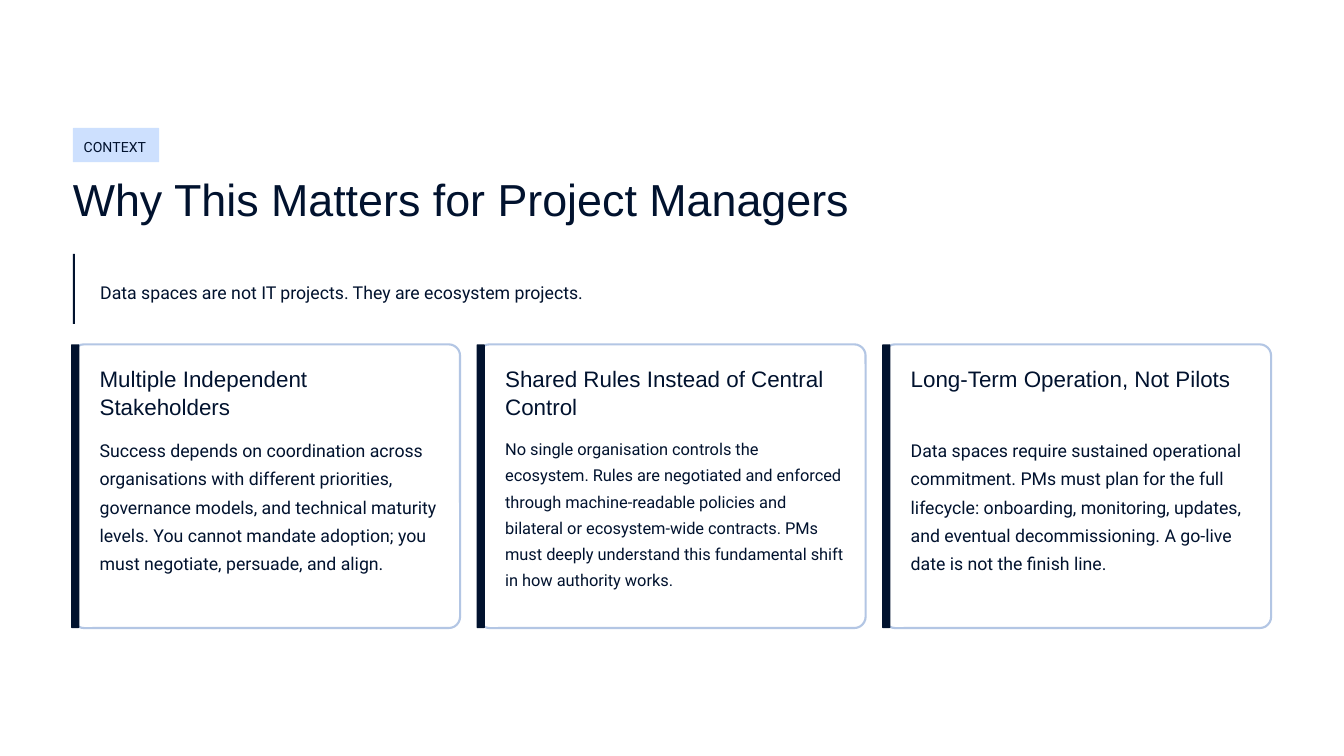
"""Build the context slide on why data spaces matter for project managers."""
from pptx import Presentation
from pptx.dml.color import RGBColor
from pptx.enum.shapes import MSO_SHAPE
from pptx.enum.text import MSO_ANCHOR, MSO_AUTO_SIZE, PP_ALIGN
from pptx.util import Pt

COLORS = {"ink": "01122E", "tag": "CDE0FE", "border": "B3C6E4", "paper": "FFFFFF"}
FRAME = {
    "margin_left": 0, "margin_top": 0, "margin_right": 0, "margin_bottom": 0,
    "word_wrap": True, "auto_size": MSO_AUTO_SIZE.NONE, "vertical_anchor": MSO_ANCHOR.TOP,
}
HEADING = {"name": "Arial", "spacing": 1.04}
BODY = {"name": "Roboto", "spacing": 1.33}
CARDS = [
    ("Multiple Independent Stakeholders",
     "Success depends on coordination across organisations with different priorities, "
     "governance models, and technical maturity levels. You cannot mandate adoption; "
     "you must negotiate, persuade, and align.", 9.5),
    ("Shared Rules Instead of Central Control",
     "No single organisation controls the ecosystem. Rules are negotiated and enforced "
     "through machine-readable policies and bilateral or ecosystem-wide contracts. PMs "
     "must deeply understand this fundamental shift in how authority works.", 8.8),
    ("Long-Term Operation, Not Pilots",
     "Data spaces require sustained operational commitment. PMs must plan for the full "
     "lifecycle: onboarding, monitoring, updates, and eventual decommissioning. A go-live "
     "date is not the finish line.", 9.5),
]
MARGIN, CARD_TOP, CARD_WIDTH, CARD_HEIGHT, CARD_GAP = 39, 184.5, 207.5, 152, 9.75


class SlideBuilder:
    """Hold the colours and the current slide and add elements to it."""

    def __init__(self, slide, colors):
        """Keep the slide and its colours and paint the background."""
        self.slide = slide
        self.colors = colors
        fill = slide.background.fill
        fill.solid()
        fill.fore_color.rgb = self.color("paper")

    def color(self, key):
        """Return the named colour."""
        return RGBColor.from_string(self.colors[key])

    def fill_frame(self, frame, text, size, style):
        """Put one styled paragraph in a text frame."""
        for name, value in FRAME.items():
            setattr(frame, name, value)
        paragraph = frame.paragraphs[0]
        paragraph.alignment = PP_ALIGN.LEFT
        paragraph.line_spacing = style["spacing"]
        run = paragraph.add_run()
        run.text = text
        for name, value in {"name": style["name"], "size": Pt(size), "bold": False}.items():
            setattr(run.font, name, value)
        run.font.color.rgb = self.color("ink")

    def title(self, box, text, size):
        """Move the title placeholder into place and fill it."""
        title = self.slide.shapes.title
        for name, value in zip(("left", "top", "width", "height"), box):
            setattr(title, name, Pt(value))
        self.fill_frame(title.text_frame, text, size, HEADING)

    def text(self, box, text, size, style):
        """Add a text box."""
        textbox = self.slide.shapes.add_textbox(*map(Pt, box))
        self.fill_frame(textbox.text_frame, text, size, style)

    def block(self, box, fill, rounding=0, border=None):
        """Add a filled rectangle, rounded or outlined on request."""
        kind = MSO_SHAPE.ROUNDED_RECTANGLE if rounding else MSO_SHAPE.RECTANGLE
        block = self.slide.shapes.add_shape(kind, *map(Pt, box))
        block.shadow.inherit = False
        if rounding:
            block.adjustments[0] = rounding
        block.fill.solid()
        block.fill.fore_color.rgb = self.color(fill)
        if border:
            block.line.color.rgb = self.color(border)
            block.line.width = Pt(1.12)
        else:
            block.line.fill.background()

    def card(self, left, heading, body, body_size):
        """Add a bordered card with an accent bar, a heading and a body."""
        text_left, text_width = left + 14.4, 182.2
        self.block((left, CARD_TOP, CARD_WIDTH, CARD_HEIGHT), "paper", 0.04, "border")
        self.block((left - 0.9, CARD_TOP, 4.4, CARD_HEIGHT), "ink", 0.1)
        self.text((text_left, CARD_TOP + 10.8, text_width, 30), heading, 12, HEADING)
        self.text((text_left, CARD_TOP + 47.5, text_width, 94), body, body_size, BODY)


def main():
    """Build and save the slide."""
    deck = Presentation()
    deck.slide_width, deck.slide_height = Pt(720), Pt(405)
    builder = SlideBuilder(deck.slides.add_slide(deck.slide_layouts[5]), COLORS)

    builder.block((MARGIN, 68.5, 46.3, 18.4), "tag", 0.03)
    builder.text((44.8, 71.5, 70, 12.5), "CONTEXT", 7.5, BODY)
    builder.title((MARGIN, 90.7, 484.5, 30), "Why This Matters for Project Managers", 24)
    builder.block((MARGIN, 136, 1.2, 37.5), "ink")
    builder.text((53.7, 147, 663, 16),
                 "Data spaces are not IT projects. They are ecosystem projects.", 9.5, BODY)
    for index, card in enumerate(CARDS):
        builder.card(MARGIN + index * (CARD_WIDTH + CARD_GAP), *card)

    deck.save("out.pptx")


if __name__ == "__main__":
    main()
